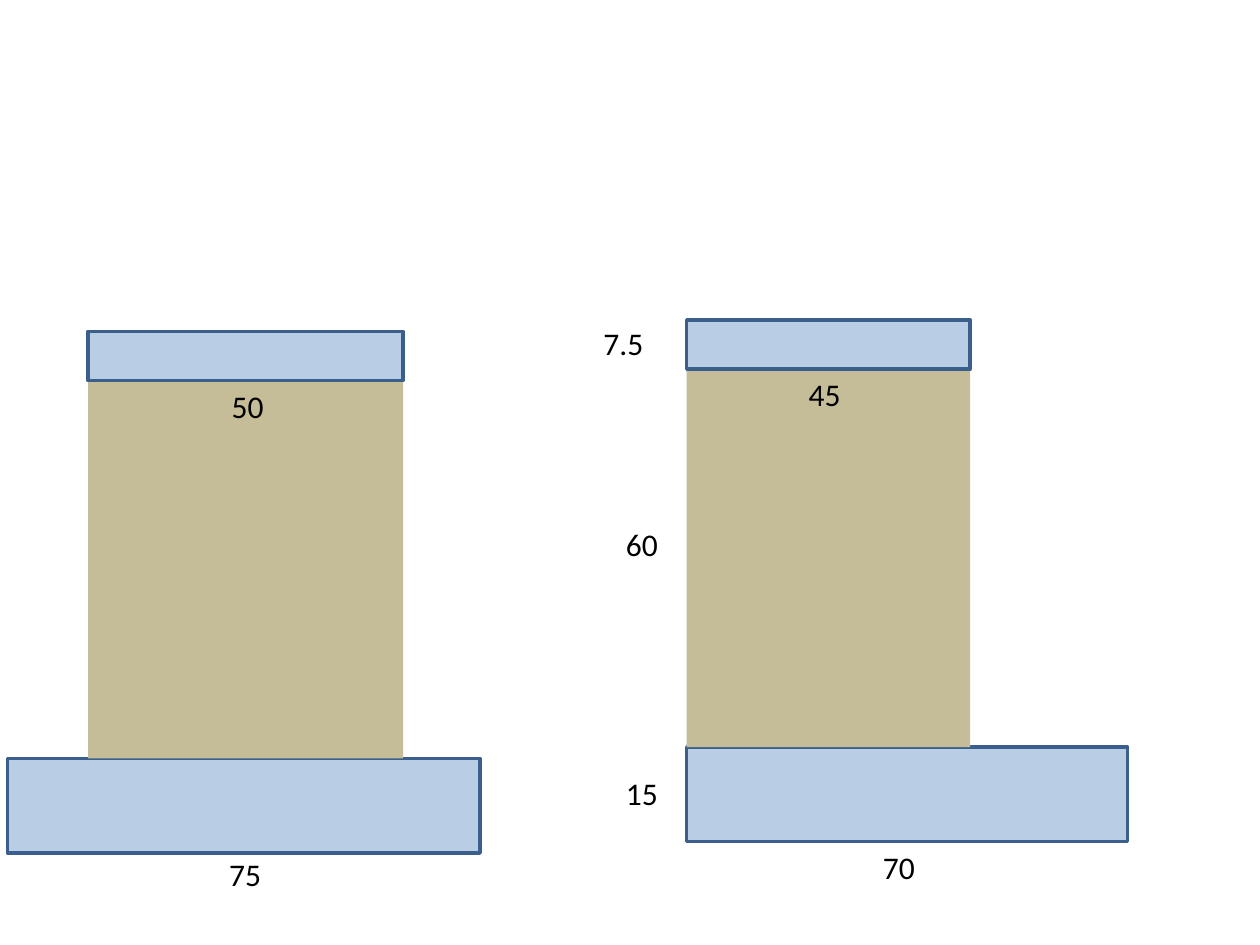
from dataclasses import dataclass

import pptx
import pptx.dml.color
import pptx.enum.shapes
import pptx.enum.text
import pptx.util

PX = 9144  # EMU per px, 100 px to the inch
SCALE = 5  # px per unit of the labelled dimensions
CAP_H, BODY_H, BASE_H = 39, 60 * SCALE, 15 * SCALE
BLUE, BORDER, TAN, BLACK = "B9CDE5", "3A5F8C", "C4BD97", "000000"


@dataclass
class Label:
    text: str
    x: int
    y: int
    w: int = 46
    h: int = 40


@dataclass
class Pier:
    body_x: int
    body_y: int
    body_units: int
    base_x: int
    base_units: int
    labels: list[Label]


PIERS = [
    Pier(545, 293, 45, 545, 70, [
        Label("15", 487, 609),
        Label("7.5", 469, 252, 52),
        Label("45", 632, 293),
        Label("60", 487, 412),
        Label("70", 691, 668),
    ]),
    Pier(70, 302, 50, 6, 75, [
        Label("50", 174, 302),
        Label("75", 172, 674),
    ]),
]


def px(n: int) -> pptx.util.Emu:
    return pptx.util.Emu(n * PX)


def color(value: str) -> pptx.dml.color.RGBColor:
    return pptx.dml.color.RGBColor.from_string(value)


def add_block(s, x: int, y: int, w: int, h: int, fill: str, line: str | None = None) -> None:
    sp = s.shapes.add_shape(pptx.enum.shapes.MSO_SHAPE.RECTANGLE, px(x), px(y), px(w), px(h))
    sp.shadow.inherit = False
    sp.fill.solid()
    sp.fill.fore_color.rgb = color(fill)
    if line is None:
        sp.line.fill.background()
    else:
        sp.line.color.rgb = color(line)
        sp.line.width = pptx.util.Pt(2)


def add_label(s, label: Label) -> None:
    sp = s.shapes.add_textbox(px(label.x), px(label.y), px(label.w), px(label.h))
    tf = sp.text_frame
    tf.word_wrap = False
    tf.auto_size = pptx.enum.text.MSO_AUTO_SIZE.SHAPE_TO_FIT_TEXT
    r = tf.paragraphs[0].add_run()
    r.text = label.text
    r.font.name = "Calibri"
    r.font.size = pptx.util.Pt(18)
    r.font.color.rgb = color(BLACK)


def add_pier(s, pier: Pier) -> None:
    body_w = pier.body_units * SCALE
    # Base, body and cap, from back to front
    add_block(s, pier.base_x, pier.body_y + BODY_H, pier.base_units * SCALE, BASE_H, BLUE, BORDER)
    add_block(s, pier.body_x, pier.body_y, body_w, BODY_H, TAN)
    add_block(s, pier.body_x, pier.body_y - CAP_H, body_w, CAP_H, BLUE, BORDER)
    # Dimensions
    for label in pier.labels:
        add_label(s, label)


def main() -> None:
    prs = pptx.Presentation()
    prs.slide_width, prs.slide_height = px(1000), px(750)
    s = prs.slides.add_slide(prs.slide_layouts[6])
    for pier in PIERS:
        add_pier(s, pier)
    prs.save("out.pptx")


if __name__ == "__main__":
    main()
